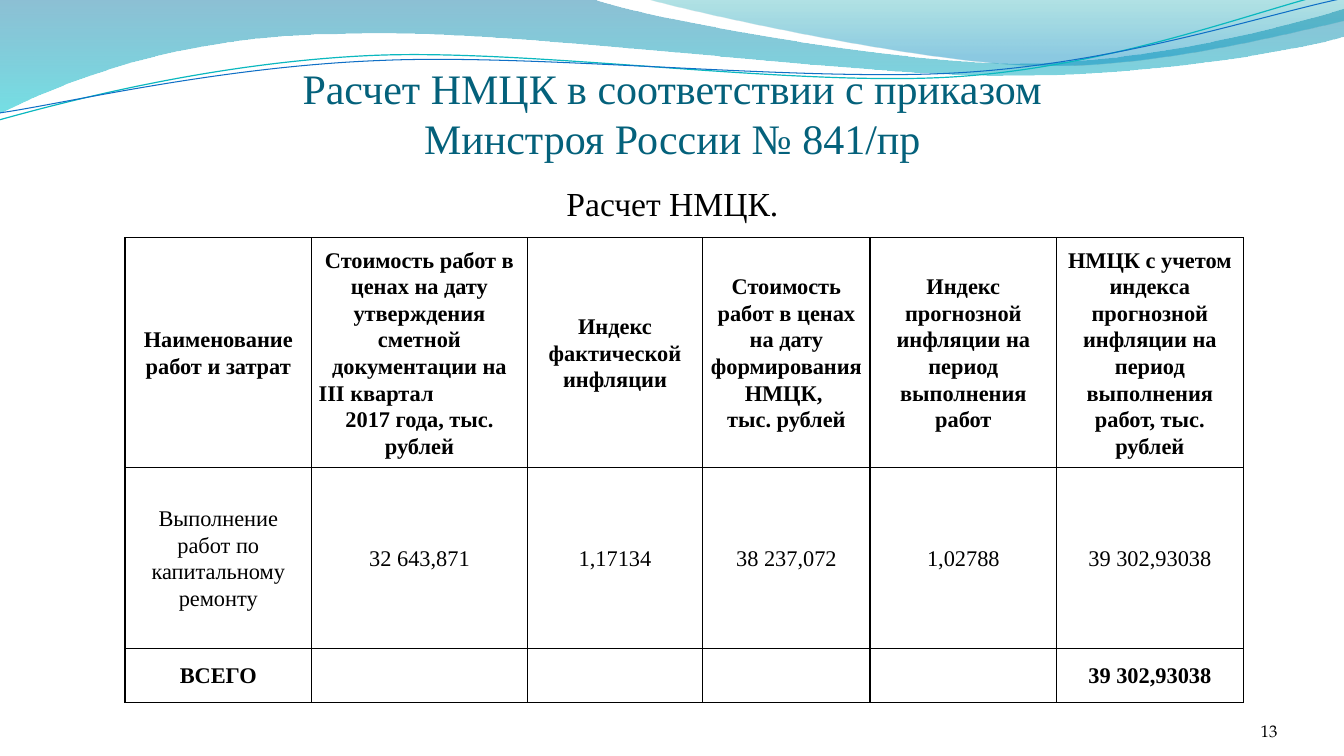
from lxml import etree
from pptx import Presentation
from pptx.dml.color import RGBColor
from pptx.enum.text import MSO_ANCHOR, PP_ALIGN
from pptx.oxml.ns import qn
from pptx.util import Inches, Pt

LEFT, CENTER, RIGHT = PP_ALIGN.LEFT, PP_ALIGN.CENTER, PP_ALIGN.RIGHT
MIDDLE, BOTTOM = MSO_ANCHOR.MIDDLE, MSO_ANCHOR.BOTTOM
SERIF = "Times New Roman"
NUMBER_FONT = "TeX Gyre Pagella"
COLORS = {
    "title": "04617B", "black": "000000",
    "deep": "0074A1", "aqua": "00C6CF", "teal": "00A1A9", "sky": "008BBF",
    "cyan_line": "0AB8BF", "blue_line": "0F6FC6",
}

BACK_WAVE = [
    [(0, -0.01)], [(5.87, -0.01)],
    [(6.34, 0.17), (8.85, 0.63), (10.11, 0.63)],
    [(11.38, 0.63), (12.78, 0.26), (13.33, 0.09)],
    [(13.35, 0.36)],
    [(13.11, 0.44), (11.6, 0.76), (9.94, 0.75)],
    [(8.29, 0.75), (5.09, 0.28), (3.43, 0.34)],
    [(1.72, 0.35), (0.61, 0.83), (-0.01, 1.13)],
]
FRONT_WAVE = [
    [(6.39, -0.01)],
    [(6.79, 0.11), (9.09, 0.62), (10.25, 0.65)],
    [(11.41, 0.69), (12.82, 0.32), (13.33, 0.21)],
    [(13.33, 0)],
]
CYAN_CURVE = [
    [(-0.01, 1.19)],
    [(0.64, 1.01), (2.11, 0.62), (3.69, 0.55)],
    [(5.27, 0.48), (7.9, 0.87), (9.5, 0.76)],
    [(11.1, 0.65), (12.52, 0.08), (13.31, -0.1)],
]
BLUE_CURVE = [
    [(0, 1.12)],
    [(0.63, 1.03), (2.18, 0.66), (3.78, 0.6)],
    [(5.37, 0.53), (7.96, 0.82), (9.55, 0.72)],
    [(11.15, 0.62), (12.55, 0.14), (13.34, -0.02)],
]

COLUMN_WIDTHS = [1.85, 2.14, 1.74, 1.66, 1.85, 1.85]
ROW_HEIGHTS = [1.65, 1.79, 0.54]
ROWS = [
    [
        "Наименование работ и затрат",
        "Стоимость работ в ценах на дату утверждения сметной документации на\n"
        "III квартал\n2017 года, тыс. рублей",
        "Индекс фактической инфляции",
        "Стоимость работ в ценах на дату формирования НМЦК, \nтыс. рублей",
        "Индекс прогнозной инфляции на период выполнения работ",
        "НМЦК с учетом индекса прогнозной инфляции на период выполнения работ, тыс. рублей",
    ],
    ["Выполнение работ по капитальному ремонту", "32 643,871", "1,17134",
     "38 237,072", "1,02788", "39 302,93038"],
    ["ВСЕГО", "", "", "", "", "39 302,93038"],
]


def rgb(name):
    """Return the named colour."""
    return RGBColor.from_string(COLORS[name])


def write_text(frame, text, size=16, font=SERIF, color="black", bold=False,
               align=CENTER, spacing=None):
    """Fill a text frame with one paragraph per line of text."""
    frame.word_wrap = True
    for index, line in enumerate(text.split("\n")):
        para = frame.paragraphs[0] if index == 0 else frame.add_paragraph()
        para.alignment = align
        if spacing:
            para.line_spacing = spacing
        para.text = line
        for span in para.runs:
            span.font.size, span.font.name, span.font.bold = Pt(size), font, bold
            span.font.color.rgb = rgb(color)


def add_text(page, left, top, width, height, text, anchor=BOTTOM, **style):
    """Add a text box without insets."""
    box = page.shapes.add_textbox(Inches(left), Inches(top), Inches(width), Inches(height))
    frame = box.text_frame
    frame.margin_left = frame.margin_right = frame.margin_top = frame.margin_bottom = 0
    frame.vertical_anchor = anchor
    write_text(frame, text, **style)


def add_outline(page, segments, close):
    """Add a freeform whose three-point segments are cubic curves."""
    points = [(Inches(x), Inches(y)) for segment in segments for x, y in segment]
    builder = page.shapes.build_freeform(*points[0], scale=1.0)
    builder.add_line_segments(points[1:], close=close)
    shape = builder.convert_to_shape()
    shape.shadow.inherit = False
    steps = iter(list(shape._element.iter(qn("a:lnTo"))))
    for segment in segments[1:]:
        group = [next(steps) for _ in segment]
        if len(group) == 3:
            curve = etree.Element(qn("a:cubicBezTo"))
            group[0].addprevious(curve)
            for step in group:
                curve.append(step[0])
                step.getparent().remove(step)
    return shape


def add_wave(page, segments, stops):
    """Add a wave with a translucent downward gradient."""
    shape = add_outline(page, segments, True)
    shape.line.fill.background()
    shape.fill.gradient()
    shape.fill.gradient_angle = 270
    for stop, (position, color, opacity) in zip(shape.fill.gradient_stops, stops):
        stop.position = position
        stop.color.rgb = rgb(color)
    tones = shape._element.spPr.iter(qn("a:srgbClr"))
    for tone, (_, _, opacity) in zip(tones, stops):
        etree.SubElement(tone, qn("a:alpha"), val=str(opacity * 1000))


def add_curve(page, segments, color, width):
    """Add a thin open curve."""
    shape = add_outline(page, segments, False)
    shape.fill.background()
    shape.line.color.rgb = rgb(color)
    shape.line.width = Pt(width)


def add_borders(cell):
    """Draw a one-point black line on each side of a cell."""
    properties = cell._tc.get_or_add_tcPr()
    for side in ("lnL", "lnR", "lnT", "lnB"):
        line = etree.SubElement(properties, qn(f"a:{side}"), w=str(Pt(1)))
        fill = etree.SubElement(line, qn("a:solidFill"))
        etree.SubElement(fill, qn("a:srgbClr"), val=COLORS["black"])


def add_price_table(page, left, top):
    """Add the price calculation table."""
    table = page.shapes.add_table(
        len(ROWS), len(COLUMN_WIDTHS), Inches(left), Inches(top),
        Inches(sum(COLUMN_WIDTHS)), Inches(sum(ROW_HEIGHTS))).table
    table.first_row = table.horz_banding = False
    for column, width in zip(table.columns, COLUMN_WIDTHS):
        column.width = Inches(width)
    for row, height in zip(table.rows, ROW_HEIGHTS):
        row.height = Inches(height)
    for row_index, texts in enumerate(ROWS):
        for column_index, text in enumerate(texts):
            cell = table.cell(row_index, column_index)
            add_borders(cell)
            cell.fill.background()
            cell.margin_left = cell.margin_right = Inches(0.07)
            cell.margin_top = cell.margin_bottom = 0
            cell.vertical_anchor = MIDDLE
            if text:
                write_text(cell.text_frame, text, bold=row_index != 1, spacing=1.07)
    quarter = table.cell(0, 1).text_frame.paragraphs[1]
    quarter.alignment = LEFT


def main():
    """Build the slide and save it."""
    deck = Presentation()
    deck.slide_width, deck.slide_height = Inches(13.33), Inches(7.5)
    page = deck.slides.add_slide(deck.slide_layouts[6])
    add_wave(page, BACK_WAVE, [(0, "deep", 45), (1, "aqua", 55)])
    add_wave(page, FRONT_WAVE, [(0, "teal", 30), (0.8, "sky", 45)])
    add_curve(page, CYAN_CURVE, "cyan_line", 0.85)
    add_curve(page, BLUE_CURVE, "blue_line", 0.75)
    add_text(page, 0.67, 0.62, 12, 1,
             "Расчет НМЦК в соответствии с приказом\vМинстроя России № 841/пр",
             size=30, color="title")
    add_text(page, 0.67, 1.78, 12, 0.46, "Расчет НМЦК.", anchor=MIDDLE, size=24)
    add_price_table(page, 1.24, 2.36)
    add_text(page, 11.56, 6.95, 1.11, 0.4, "13", size=12, font=NUMBER_FONT, align=RIGHT)
    deck.save("out.pptx")


if __name__ == "__main__":
    main()
